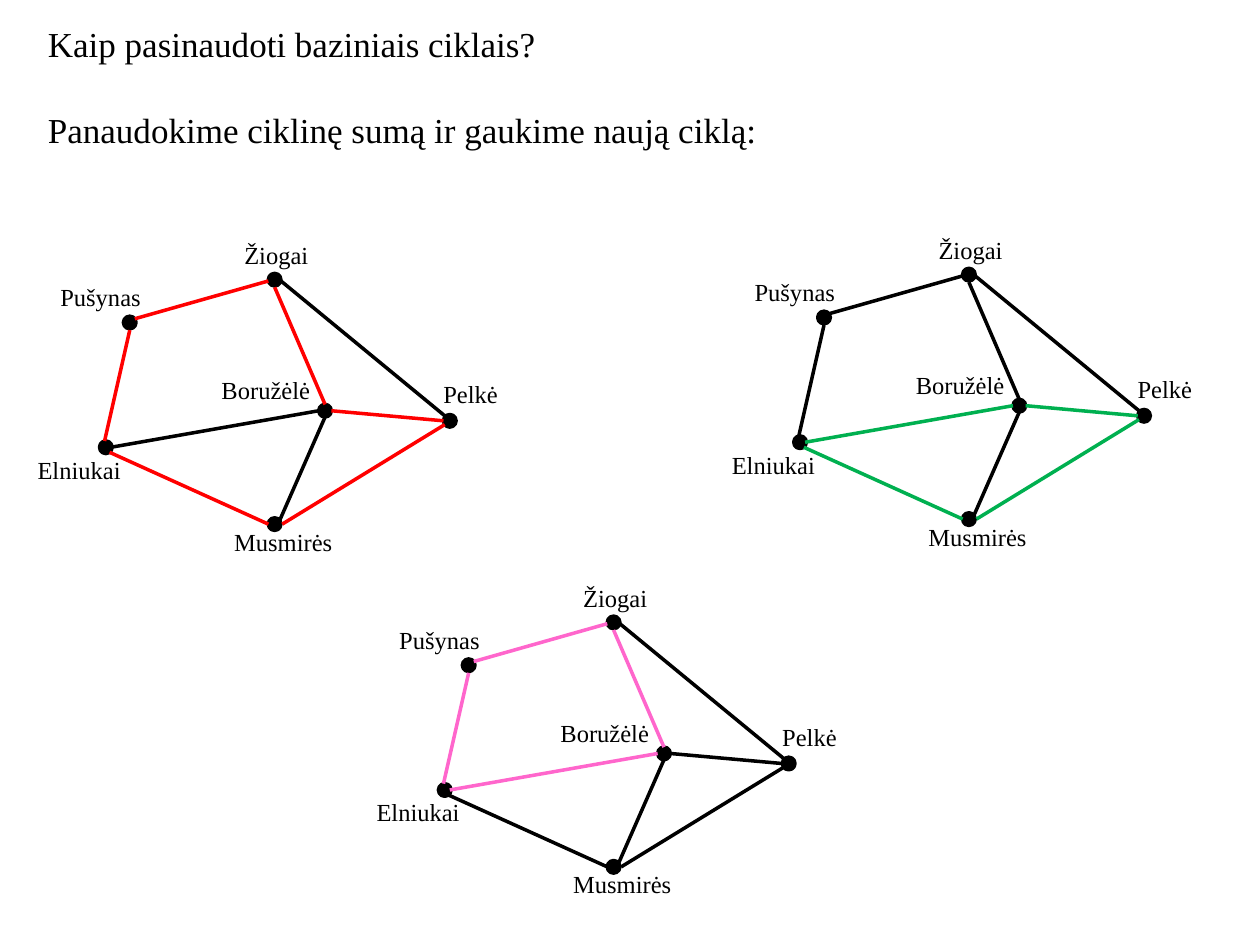
from lxml import etree
from pptx import Presentation
from pptx import util as u
from pptx.dml.color import RGBColor
from pptx.enum import shapes, text
from pptx.oxml.ns import qn


def rgb(value):
    return RGBColor.from_string(value)


def write(sp, content, size=14, color="000000", font="Times New Roman", gap=0):
    tf = sp.text_frame
    tf.word_wrap = True
    tf.auto_size = text.MSO_AUTO_SIZE.SHAPE_TO_FIT_TEXT
    tf.vertical_anchor = text.MSO_ANCHOR.TOP
    for i, line in enumerate(content.split("\n")):
        p = tf.add_paragraph() if i else tf.paragraphs[0]
        p.alignment = text.PP_ALIGN.LEFT
        p.space_before = u.Pt(gap if i else 0)
        r = p.add_run()
        r.text = line
        r.font.size = u.Pt(size)
        r.font.name = font
        r.font.color.rgb = rgb(color)


prs = Presentation()
prs.slide_width, prs.slide_height = u.Inches(10), u.Inches(7.5)
s = prs.slides.add_slide(prs.slide_layouts[5])

title = s.shapes.title
title.left, title.top = u.Inches(0.28), u.Inches(0.13)
title.width, title.height = u.Inches(9.13), u.Inches(1.11)
write(title, "Kaip pasinaudoti baziniais ciklais?\n"
             "Panaudokime ciklinę sumą ir gaukime naują ciklą:", size=20, gap=25)

DOT = 0.1
nodes = {
    "Pušynas": (0.98, 2.51),
    "Žiogai": (2.13, 2.17),
    "Boružėlė": (2.53, 3.21),
    "Elniukai": (0.79, 3.5),
    "Musmirės": (2.13, 4.11),
    "Pelkė": (3.52, 3.29),
}
edges = {
    "EP": (0.83, 3.5, 1.03, 2.62),
    "PŽ": (1.07, 2.53, 2.13, 2.23),
    "EB": (0.88, 3.55, 2.53, 3.26),
    "BŽ": (2.58, 3.21, 2.18, 2.28),
    "EM": (0.87, 3.59, 2.13, 4.16),
    "ŽK": (2.23, 2.23, 3.53, 3.3),
    "MK": (2.24, 4.16, 3.53, 3.37),
    "MB": (2.22, 4.13, 2.58, 3.31),
    "BK": (2.63, 3.26, 3.52, 3.34),
}
labels = {
    "Žiogai": (1.84, 1.86, 1.58),
    "Pelkė": (3.42, 2.96, 0.99),
    "Musmirės": (1.76, 4.13, 1.54),
    "Boružėlė": (1.66, 2.93, 0.97),
    "Pušynas": (0.38, 2.19, 1.25),
    "Elniukai": (0.2, 3.56, 0.86),
}
graphs = [
    (0, 0, "FF0000", ("EP", "PŽ", "BŽ", "EM", "MK", "BK")),
    (5.51, -0.04, "00B050", ("EB", "EM", "MK", "BK")),
    (2.69, 2.72, "FF66CC", ("EP", "PŽ", "EB", "BŽ")),
]

for dx, dy, cycle_color, cycle in graphs:
    graph = s.shapes.add_group_shape().shapes
    for x, y in nodes.values():
        sp = graph.add_shape(shapes.MSO_SHAPE.OVAL, u.Inches(x + dx), u.Inches(y + dy),
                             u.Inches(DOT), u.Inches(DOT))
        sp.shadow.inherit = False
        sp.fill.solid()
        sp.fill.fore_color.rgb = rgb("000000")
        sp.line.color.rgb = rgb("000000")
        sp.line.width = u.Pt(2)
    for edge, (x1, y1, x2, y2) in edges.items():
        line = graph.add_connector(shapes.MSO_CONNECTOR.STRAIGHT,
                                   u.Inches(x1 + dx), u.Inches(y1 + dy),
                                   u.Inches(x2 + dx), u.Inches(y2 + dy))
        line.line.color.rgb = rgb(cycle_color if edge in cycle else "000000")
        line.line.width = u.Pt(2)
        etree.SubElement(line._element.spPr, qn("a:effectLst"))
    for name, (x, y, width) in labels.items():
        sp = graph.add_textbox(u.Inches(x + dx), u.Inches(y + dy),
                               u.Inches(width), u.Inches(0.34))
        write(sp, name)

prs.save("out.pptx")
